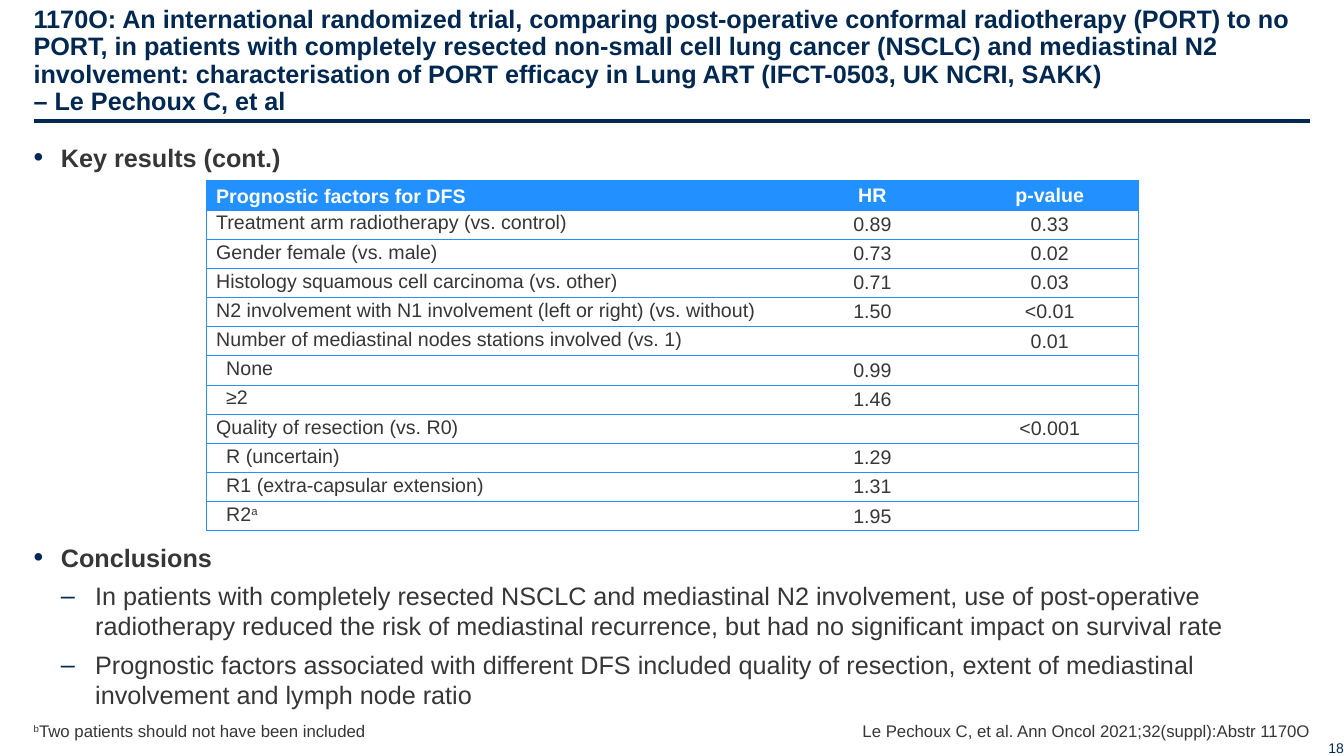
from lxml import etree
from pptx import Presentation, util as u
from pptx.dml.color import RGBColor
from pptx.enum import shapes, text
from pptx.oxml.ns import qn

NAVY, GREY, BLUE, WHITE = "002850", "363636", "2291FF", "FFFFFF"
LEFT, RIGHT, CENTRE = text.PP_ALIGN.LEFT, text.PP_ALIGN.RIGHT, text.PP_ALIGN.CENTER
TOP, MIDDLE, BOTTOM = text.MSO_ANCHOR.TOP, text.MSO_ANCHOR.MIDDLE, text.MSO_ANCHOR.BOTTOM

TITLE = (
    "1170O: An international randomized trial, comparing post-operative conformal "
    "radiotherapy (PORT) to no PORT, in patients with completely resected non-small "
    "cell lung cancer (NSCLC) and mediastinal N2 involvement: characterisation of PORT "
    "efficacy in Lung ART (IFCT-0503, UK NCRI, SAKK) \v– Le Pechoux C, et al"
)
BODY = [
    (0, 0, "Key results (cont.)"),
    (0, 258, "Conclusions"),
    (1, 0, "In patients with completely resected NSCLC and mediastinal N2 involvement, use of "
           "post-operative radiotherapy reduced the risk of mediastinal recurrence, but had "
           "no significant impact on survival rate"),
    (1, 0, "Prognostic factors associated with different DFS included quality of resection, "
           "extent of mediastinal involvement and lymph node ratio"),
]
FACTORS = [
    (0, "Prognostic factors for DFS", "HR", "p-value"),
    (0, "Treatment arm radiotherapy (vs. control)", "0.89", "0.33"),
    (0, "Gender female (vs. male)", "0.73", "0.02"),
    (0, "Histology squamous cell carcinoma (vs. other)", "0.71", "0.03"),
    (0, "N2 involvement with N1 involvement (left or right) (vs. without)", "1.50", "<0.01"),
    (0, "Number of mediastinal nodes stations involved (vs. 1)", "", "0.01"),
    (1, "None", "0.99", ""),
    (1, "≥2", "1.46", ""),
    (0, "Quality of resection (vs. R0)", "", "<0.001"),
    (1, "R (uncertain)", "1.29", ""),
    (1, "R1 (extra-capsular extension)", "1.31", ""),
    (1, "R2^a^", "1.95", ""),
]


def colour(value):
    """Turn a hex string into a colour."""
    return RGBColor.from_string(value)


def set_margins(target, left, top, right, bottom):
    """Set the inner margins of a text frame or a table cell."""
    target.margin_left, target.margin_top = u.Pt(left), u.Pt(top)
    target.margin_right, target.margin_bottom = u.Pt(right), u.Pt(bottom)


def write(para, words, size, ink, bold=False, align=LEFT):
    """Write words into a paragraph, raising the parts between carets."""
    para.alignment = align
    font = para.font
    font.name, font.size, font.bold = "Arial", u.Pt(size), bold
    font.color.rgb = colour(ink)
    for index, part in enumerate(words.split("^")):
        if part:
            span = para.add_run()
            span.text = part
            if index % 2:
                span.font._element.set("baseline", "30000")
    if not words:
        etree.SubElement(para._p, qn("a:endParaRPr"), sz=str(size * 100))


def add_box(page, left, top, width, height, anchor, margins=(0, 0, 0, 0)):
    """Add a wrapping text box and return its text frame."""
    box = page.shapes.add_textbox(u.Pt(left), u.Pt(top), u.Pt(width), u.Pt(height))
    frame = box.text_frame
    frame.word_wrap = True
    frame.vertical_anchor = anchor
    set_margins(frame, *margins)
    return frame


def add_note(page, left, top, width, height, words, size=12, ink=GREY, align=LEFT,
             margins=(0, 0, 0, 0)):
    """Add a single-paragraph text box that sits on its lower edge."""
    frame = add_box(page, left, top, width, height, BOTTOM, margins)
    write(frame.paragraphs[0], words, size, ink, align=align)


def add_title(page):
    """Place and format the title placeholder."""
    title = page.shapes.title
    title.left, title.top, title.width, title.height = u.Pt(24), u.Pt(8.6), u.Pt(912), u.Pt(74.2)
    frame = title.text_frame
    frame.text = TITLE
    frame.word_wrap = True
    frame.auto_size = text.MSO_AUTO_SIZE.NONE
    frame.vertical_anchor = BOTTOM
    set_margins(frame, 0, 3.6, 0, 0)
    para = frame.paragraphs[0]
    write(para, "^", 18, NAVY, bold=True)
    para.line_spacing = 0.9


def add_rule(page):
    """Draw the line under the title."""
    rule = page.shapes.add_connector(
        shapes.MSO_CONNECTOR.STRAIGHT, u.Pt(24), u.Pt(86.4), u.Pt(936), u.Pt(86.4))
    rule.line.color.rgb = colour(NAVY)
    rule.line.width = u.Pt(2.25)
    etree.SubElement(rule._element.spPr, qn("a:effectLst"))


def set_bullet(para, level):
    """Give a paragraph its hanging indent and navy bullet."""
    indent, hang = ((19.5, 19.5), (44, 24.5))[level]
    props = para._p.get_or_add_pPr()
    props.set("marL", str(u.Pt(indent)))
    props.set("indent", str(-u.Pt(hang)))
    ink = etree.SubElement(props, qn("a:buClr"))
    etree.SubElement(ink, qn("a:srgbClr"), val=NAVY)
    etree.SubElement(props, qn("a:buSzPct"), val=("110000", "100000")[level])
    etree.SubElement(props, qn("a:buFont"), typeface="Arial")
    etree.SubElement(props, qn("a:buChar"), char="•–"[level])


def add_body(page):
    """Add the bulleted results and conclusions."""
    frame = add_box(page, 24, 97.9, 912, 398.2, TOP, (0, 3.6, 0, 3.6))
    for index, (level, before, words) in enumerate(BODY):
        para = frame.add_paragraph() if index else frame.paragraphs[0]
        set_bullet(para, level)
        para.level = level
        para.space_before, para.space_after = u.Pt(before), u.Pt(6)
        write(para, words, 18, GREY, bold=level == 0)


def set_borders(cell, sides):
    """Draw blue lines on the given sides of a cell and none on the others."""
    props = cell._tc.get_or_add_tcPr()
    for side in "LRTB":
        line = etree.SubElement(props, qn(f"a:ln{side}"), w=str(u.Pt(0.75)))
        if side in sides:
            fill = etree.SubElement(line, qn("a:solidFill"))
            etree.SubElement(fill, qn("a:srgbClr"), val=BLUE)
        else:
            etree.SubElement(line, qn("a:noFill"))


def add_factor_table(page):
    """Add the table of prognostic factors."""
    widths = (412.6, 126.7, 126.7)
    height = 20.84
    table = page.shapes.add_table(
        len(FACTORS), len(widths), u.Pt(147.2), u.Pt(129.2),
        u.Pt(sum(widths)), u.Pt(height * len(FACTORS))).table
    table.first_row = table.horz_banding = False
    for column, width in zip(table.columns, widths):
        column.width = u.Pt(width)
    for r, (level, *values) in enumerate(FACTORS):
        header = r == 0
        table.rows[r].height = u.Pt(height)
        for c, words in enumerate(values):
            cell = table.cell(r, c)
            set_borders(cell, ("LTB", "TB", "RTB")[c])
            if header:
                cell.fill.solid()
                cell.fill.fore_color.rgb = colour(BLUE)
            else:
                cell.fill.background()
            set_margins(cell, 14.4 if level and c == 0 else 7.2, 1.44, 7.2, 1.44)
            cell.vertical_anchor = MIDDLE if c else BOTTOM if header else TOP
            write(cell.text_frame.paragraphs[0], words, 14, WHITE if header else GREY,
                  bold=header, align=CENTRE if c else LEFT)


def main():
    """Build the slide and save the deck."""
    deck = Presentation()
    deck.slide_width, deck.slide_height = u.Pt(960), u.Pt(540)
    page = deck.slides.add_slide(deck.slide_layouts[5])
    add_rule(page)
    add_note(page, 913, 511.2, 47, 28.8, "18", 10, NAVY, RIGHT, (7.2, 3.6, 0, 0))
    add_title(page)
    add_body(page)
    add_note(page, 502.6, 513.4, 433.4, 15.8,
             "Le Pechoux C, et al. Ann Oncol 2021;32(suppl):Abstr 1170O", align=RIGHT)
    add_factor_table(page)
    add_note(page, 24, 491, 433.4, 38.2, "^b^Two patients should not have been included")
    deck.save("out.pptx")


if __name__ == "__main__":
    main()
